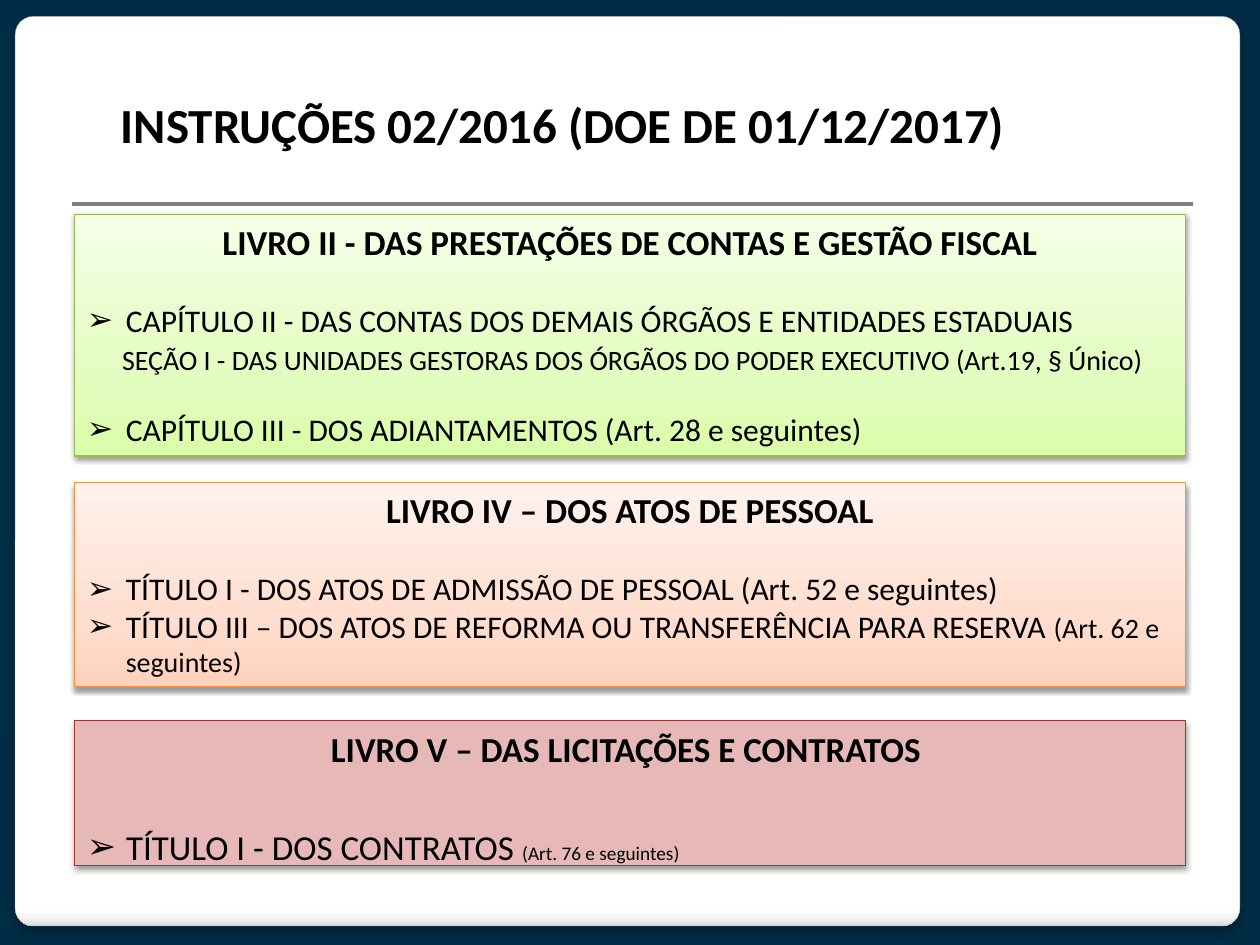
from pptx import Presentation
from pptx.dml.color import RGBColor
from pptx.enum.shapes import MSO_CONNECTOR, MSO_SHAPE
from pptx.enum.text import MSO_ANCHOR, MSO_AUTO_SIZE, PP_ALIGN
from pptx.oxml.ns import qn
from pptx.util import Inches, Pt
from lxml.etree import SubElement


def rgb(value):
    return RGBColor.from_string(value)


def decorate(shape, stops, angle, line, width, shadow):
    """Set fill, outline and downward shadow (opacity %, blur pt, distance pt)."""
    if len(stops) == 1:
        shape.fill.solid()
        shape.fill.fore_color.rgb = rgb(stops[0][1])
    else:
        shape.fill.gradient()
        shape.fill.gradient_angle = angle
        stop_list = shape._element.spPr.find(qn("a:gradFill")).find(qn("a:gsLst"))
        for old_stop in list(stop_list):
            stop_list.remove(old_stop)
        for position, colour in stops:
            stop = SubElement(stop_list, qn("a:gs"), pos=str(position * 1000))
            SubElement(stop, qn("a:srgbClr"), val=colour)
    shape.line.color.rgb = rgb(line)
    shape.line.width = Pt(width)
    shape.shadow.inherit = False
    opacity, blur, distance = shadow
    effects = shape._element.spPr.find(qn("a:effectLst"))
    outer = SubElement(effects, qn("a:outerShdw"), blurRad=str(Pt(blur)),
                       dist=str(Pt(distance)), dir="5400000", rotWithShape="0")
    colour = SubElement(outer, qn("a:srgbClr"), val="000000")
    SubElement(colour, qn("a:alpha"), val=str(opacity * 1000))


# Each book: top, height, fill stops, outline, heading, entries.
# Each entry: space before, bulleted, runs of (text, size).
BOOKS = [
    (1.7, 1.92, [(0, "DAFDA7"), (35, "E4FCC2"), (100, "F5FFE7")], "98B955",
     "LIVRO II - DAS PRESTAÇÕES DE CONTAS E GESTÃO FISCAL", [
         (22, True, [("CAPÍTULO II - DAS CONTAS DOS DEMAIS ÓRGÃOS E ENTIDADES ESTADUAIS", 18)]),
         (2, False, [("SEÇÃO I - DAS UNIDADES GESTORAS DOS ÓRGÃOS DO PODER EXECUTIVO "
                      "(Art.19, § Único)", 16)]),
         (19.5, True, [("CAPÍTULO III - DOS ADIANTAMENTOS (Art. 28 e seguintes)", 18)])]),
    (3.83, 1.62, [(0, "FFD2BD"), (35, "FFDED0"), (100, "FFF2ED")], "F69240",
     "LIVRO IV – DOS ATOS DE PESSOAL", [
         (22, True, [("TÍTULO I - DOS ATOS DE ADMISSÃO DE PESSOAL (Art. 52 e seguintes)", 18)]),
         (0, True, [("TÍTULO III – DOS ATOS DE REFORMA OU TRANSFERÊNCIA PARA RESERVA ", 18),
                    ("(Art. 62 e seguintes)", 16)])]),
    (5.72, 1.15, [(0, "E6B9B8")], "953735",
     "LIVRO V – DAS LICITAÇÕES E CONTRATOS ", [
         (32, True, [("TÍTULO I - DOS CONTRATOS ", 20), ("(Art. 76 e seguintes)", 11)])]),
]

prs = Presentation()
prs.slide_width, prs.slide_height = Inches(10), Inches(7.5)
slide = prs.slides.add_slide(prs.slide_layouts[1])
slide.background.fill.solid()
slide.background.fill.fore_color.rgb = rgb("002D46")
title, body = slide.placeholders

# White page and rule, behind the placeholders
page = slide.shapes.add_shape(MSO_SHAPE.ROUNDED_RECTANGLE, Inches(0.12), Inches(0.13),
                              Inches(9.72), Inches(7.22))
page.adjustments[0] = 0.02
decorate(page, [(0, "FFFFFF"), (98, "FFFFFF"), (99, "F7F7F7"), (100, "DADADA")],
         270, "A4A4A4", 0.16, (25, 6, 4))
slide.shapes._spTree.insert(2, page._element)
rule = slide.shapes.add_connector(MSO_CONNECTOR.STRAIGHT, Inches(0.57), Inches(1.62),
                                  Inches(9.47), Inches(1.62))
rule.line.color.rgb = rgb("808080")
rule.line.width = Pt(2.25)
SubElement(rule._element.spPr, qn("a:effectLst"))

# Title
title.left, title.top, title.width, title.height = map(Inches, (0.56, 0.41, 7.81, 1.15))
title.text_frame.text = "INSTRUÇÕES 02/2016 (DOE DE 01/12/2017)"
title.text_frame.auto_size = MSO_AUTO_SIZE.NONE
title.text_frame.vertical_anchor = MSO_ANCHOR.MIDDLE
heading_paragraph = title.text_frame.paragraphs[0]
heading_paragraph.alignment = PP_ALIGN.CENTER
for key, value in {"name": "Calibri", "size": Pt(28), "bold": True}.items():
    setattr(heading_paragraph.font, key, value)
heading_paragraph.font.color.rgb = rgb("000000")

# One box per book; the last one is the body placeholder
for top, height, stops, outline, heading, entries in BOOKS:
    place = [Inches(v) for v in (0.59, top, 8.82, height)]
    if top == BOOKS[-1][0]:
        book = body
        book.left, book.top, book.width, book.height = place
    else:
        book = slide.shapes.add_shape(MSO_SHAPE.RECTANGLE, *place)
    decorate(book, stops, 90, outline, 0.75, (38, 3.1, 1.6))
    frame = book.text_frame
    frame.word_wrap = True
    frame.auto_size = MSO_AUTO_SIZE.NONE
    frame.vertical_anchor = MSO_ANCHOR.TOP

    lines = [(0, None, [(heading, 20)])] + entries
    for number, (space, bulleted, runs) in enumerate(lines):
        is_heading = number == 0
        paragraph = frame.paragraphs[0] if is_heading else frame.add_paragraph()
        paragraph.alignment = PP_ALIGN.CENTER if is_heading else PP_ALIGN.LEFT
        paragraph.space_before = Pt(space)
        properties = paragraph._p.get_or_add_pPr()
        margin = 0 if is_heading else 0.31 if bulleted else 0.28
        properties.set("marL", str(Inches(margin)))
        properties.set("indent", str(Inches(-margin if bulleted else 0)))
        if bulleted:
            SubElement(properties, qn("a:buFont"), typeface="Arial")
            SubElement(properties, qn("a:buChar"), char="➢")
        else:
            SubElement(properties, qn("a:buNone"))
        for text, size in runs:
            run = paragraph.add_run()
            run.text = text
            for key, value in {"name": "Calibri", "size": Pt(size), "bold": is_heading}.items():
                setattr(run.font, key, value)
            run.font.color.rgb = rgb("000000")

prs.save("out.pptx")
